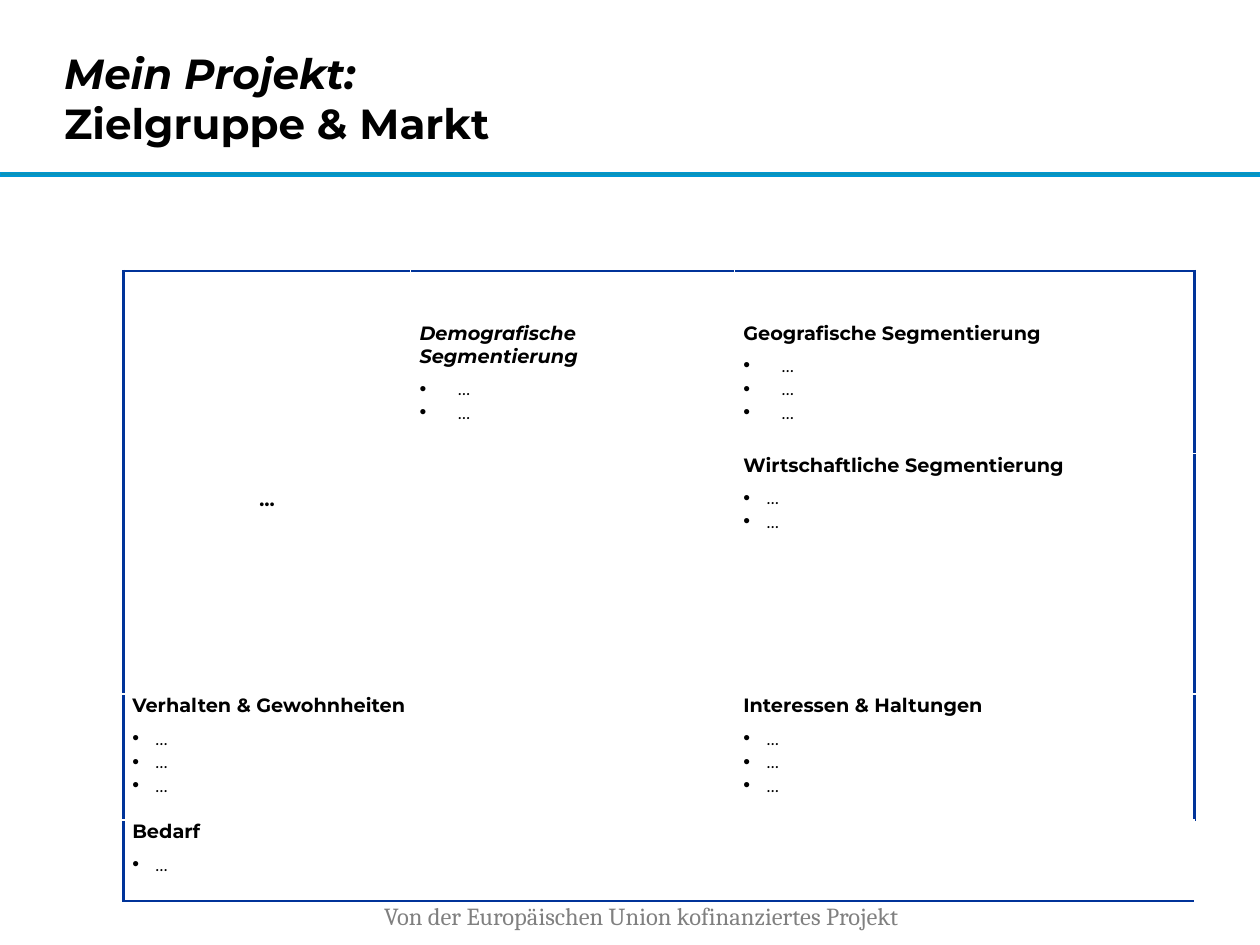
from lxml import etree
from pptx import Presentation
from pptx.dml.color import RGBColor
from pptx.enum import shapes, text
from pptx.oxml import ns
from pptx.util import Inches, Pt

BLACK = RGBColor(0x00, 0x00, 0x00)
GRAY = RGBColor(0x80, 0x80, 0x80)
TEAL = RGBColor(0x0C, 0x94, 0xB7)
BLUE = RGBColor(0x00, 0x96, 0xD3)
NAVY = RGBColor(0x00, 0x33, 0x99)


def add_run(paragraph, words, size, bold=False, italic=False, font="Montserrat", color=BLACK):
    run = paragraph.add_run()
    run.text = words
    run.font.size = Pt(size)
    run.font.name = font
    run.font.bold = bold
    run.font.italic = italic
    run.font.color.rgb = color


def add_border(cell, side, position):
    properties = cell._tc.get_or_add_tcPr()
    border = etree.Element(ns.qn(f"a:ln{side}"), w=str(Pt(1.5)))
    fill = etree.SubElement(border, ns.qn("a:solidFill"))
    etree.SubElement(fill, ns.qn("a:srgbClr"), val=str(NAVY))
    properties.insert(position, border)


prs = Presentation()
prs.slide_width, prs.slide_height = Inches(10), Inches(7.5)
slide = prs.slides.add_slide(prs.slide_layouts[5])

rule = slide.shapes.add_shape(
    shapes.MSO_SHAPE.RECTANGLE, Inches(0), Inches(1.37), Inches(10), Inches(0.03))
rule.shadow.inherit = False
rule.fill.solid()
rule.fill.fore_color.rgb = TEAL
rule.line.color.rgb = BLUE
rule.line.width = Pt(1)

funding = slide.shapes.add_textbox(Inches(2.95), Inches(7.1), Inches(4.66), Inches(0.34))
funding.text_frame.word_wrap = True
add_run(funding.text_frame.paragraphs[0], "Von der Europäischen Union kofinanziertes Projekt",
        14, font="Cambria", color=GRAY)

title = slide.shapes.title
title.left, title.top = Inches(0.51), Inches(0.18)
title.width, title.height = Inches(7.27), Inches(1.19)
heading = title.text_frame
heading.margin_left = heading.margin_right = heading.margin_top = heading.margin_bottom = 0
heading.vertical_anchor = text.MSO_ANCHOR.MIDDLE
heading.paragraphs[0].alignment = text.PP_ALIGN.LEFT
add_run(heading.paragraphs[0], "Mein Projekt:", 24, bold=True, italic=True)
heading.paragraphs[0].add_line_break()
add_run(heading.paragraphs[0], "Zielgruppe & Markt", 24, bold=True)

column_widths = [2.28, 2.57, 3.65]
row_heights = [1.45, 1.91, 1, 0.64]
segments = slide.shapes.add_table(
    4, 3, Inches(0.98), Inches(2.15), Inches(sum(column_widths)), Inches(sum(row_heights))).table
segments.first_row = segments.horz_banding = False
for column, width in zip(segments.columns, column_widths):
    column.width = Inches(width)
for row, height in zip(segments.rows, row_heights):
    row.height = Inches(height)

for r in range(4):
    for c in range(3):
        cell = segments.cell(r, c)
        cell.margin_left = cell.margin_right = Inches(0.07)
        cell.margin_top = cell.margin_bottom = 0
        cell.fill.background()
        edges = {"L": c == 0, "R": c == 2, "T": r == 0, "B": r == 3}
        for position, side in enumerate([s for s in edges if edges[s]]):
            add_border(cell, side, position)

for first, last in [((0, 0), (1, 0)), ((0, 1), (1, 1)), ((2, 0), (2, 1)), ((3, 0), (3, 2))]:
    segments.cell(*first).merge(segments.cell(*last))

persona = segments.cell(0, 0)
persona.margin_top = Inches(1.72)
persona.text_frame.paragraphs[0].alignment = text.PP_ALIGN.CENTER
add_run(persona.text_frame.paragraphs[0], "…", 11, bold=True)

topics = [
    (0, 1, "Demografische Segmentierung", 2, 0.4, 0.31),
    (0, 2, "Geografische Segmentierung", 3, 0.4, 0.31),
    (1, 2, "Wirtschaftliche Segmentierung", 2, 0, 0.19),
    (2, 0, "Verhalten & Gewohnheiten", 3, 0, 0.19),
    (2, 2, "Interessen & Haltungen", 3, 0, 0.19),
    (3, 0, "Bedarf", 1, 0, 0.19),
]
for r, c, topic, point_count, top_margin, indent in topics:
    cell = segments.cell(r, c)
    cell.margin_top = Inches(top_margin)
    topic_line = cell.text_frame.paragraphs[0]
    topic_line.space_after = Pt(5)
    add_run(topic_line, topic, 11, bold=True, italic=topic.startswith("Demografische"))
    for _ in range(point_count):
        point = cell.text_frame.add_paragraph()
        properties = point._p.get_or_add_pPr()
        properties.set("marL", str(Inches(indent)))
        properties.set("indent", str(-Inches(indent)))
        etree.SubElement(properties, ns.qn("a:buFont"), typeface="Arial")
        etree.SubElement(properties, ns.qn("a:buChar"), char="•")
        add_run(point, "…", 11, italic=True)

prs.save("out.pptx")
